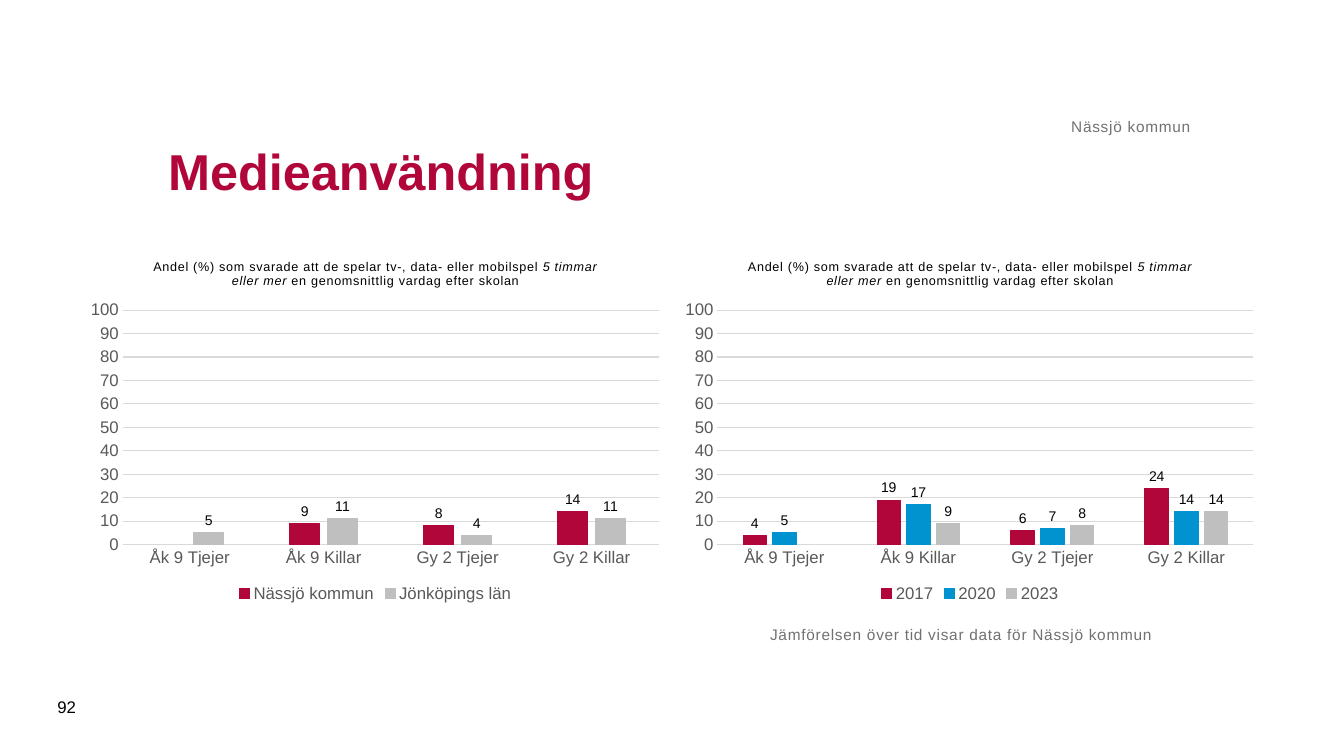
from lxml import etree
from pptx import Presentation, util as u
from pptx.chart.data import CategoryChartData
from pptx.dml.color import RGBColor
from pptx.enum import chart as ch, text
from pptx.oxml import parse_xml
from pptx.oxml.ns import nsdecls, qn

prs = Presentation()
prs.slide_width, prs.slide_height = u.Inches(13.333), u.Inches(7.5)
s = prs.slides.add_slide(prs.slide_layouts[6])

RED, BLUE, SILVER = "B1063A", "0093D0", "BFBFBF"
BLACK, AXIS, GRID, NOTE = "000000", "595959", "D9D9D9", "717171"
NUMBERS = "#,##0;#,##0"


def style(font, size, color, spacing=None):
    font.name, font.size = "Arial", u.Pt(size)
    font.color.rgb = RGBColor.from_string(color)
    if spacing:
        font._element.set("spc", str(spacing))


def box(left, top, width, height):
    """Turn percentages of the slide into lengths."""
    return [int(share * side / 100) for share, side in
            zip((left, top, width, height), (prs.slide_width, prs.slide_height) * 2)]


# Charts: two equal columns
categories = ["Åk 9 Tjejer", "Åk 9 Killar", "Gy 2 Tjejer", "Gy 2 Killar"]
title_runs = [("Andel (%) som svarade att de spelar tv-, data- eller mobilspel ", False),
              ("5 timmar eller mer", True),
              (" en genomsnittlig vardag efter skolan", False)]
charts = [
    [("Nässjö kommun", (None, 9, 8, 14), RED),
     ("Jönköpings län", (5, 11, 4, 11), SILVER)],
    [("2017", (4, 19, 6, 24), RED),
     ("2020", (5, 17, 7, 14), BLUE),
     ("2023", (None, 9, 8, 14), SILVER)],
]
plot_area = {"x": 0.073, "y": 0.187, "w": 0.906, "h": 0.643}

for col, series in enumerate(charts):
    data = CategoryChartData(number_format=NUMBERS)
    data.categories = categories
    for name, values, _ in series:
        data.add_series(name, values)
    chart = s.shapes.add_chart(ch.XL_CHART_TYPE.COLUMN_CLUSTERED,
                               *box(5.92 + 44.25 * col, 32, 44.02, 48.27), data).chart
    style(chart.font, 10, BLACK)

    # Chart title
    chart.has_title = True
    chart.chart_title.include_in_layout = False
    p = chart.chart_title.text_frame.paragraphs[0]
    for words, italic in title_runs:
        r = p.add_run()
        r.text = words
        style(r.font, 9, BLACK, 50)
        r.font.bold, r.font.italic = False, italic

    # Legend
    chart.has_legend = True
    chart.legend.position = ch.XL_LEGEND_POSITION.BOTTOM
    chart.legend.include_in_layout = False
    style(chart.legend.font, 12, AXIS)

    # Axes and gridlines
    cat, val = chart.category_axis, chart.value_axis
    for axis in (cat, val):
        axis.major_tick_mark = axis.minor_tick_mark = ch.XL_TICK_MARK.NONE
        style(axis.tick_labels.font, 12, AXIS)
    val.minimum_scale, val.maximum_scale, val.major_unit = 0, 100, 10
    val.tick_labels.number_format = NUMBERS
    val.tick_labels.number_format_is_linked = False
    val.format.line.fill.background()
    for line in (cat.format.line, val.major_gridlines.format.line):
        line.color.rgb, line.width = RGBColor.from_string(GRID), u.Pt(0.75)

    # Bars and their values
    plot = chart.plots[0]
    plot.gap_width, plot.overlap, plot.vary_by_categories = 219, -27, False
    for bars, (_, _, color) in zip(plot.series, series):
        fill, line = bars.format.fill, bars.format.line
        fill.solid()
        fill.fore_color.rgb = line.color.rgb = RGBColor.from_string(color)
        line.width = u.Pt(0.75)
        bars.invert_if_negative = False
        labels = bars.data_labels
        labels.show_value = True
        labels.position = ch.XL_LABEL_POSITION.OUTSIDE_END
        labels.number_format, labels.number_format_is_linked = NUMBERS, False
        style(labels.font, 10, BLACK)

    # Fixed plot area inside the axes
    area = chart._chartSpace.chart.plotArea
    for old in area.findall(qn("c:layout")):
        area.remove(old)
    layout = parse_xml(f"<c:layout {nsdecls('c')}><c:manualLayout/></c:layout>")
    settings = {"layoutTarget": "inner", "xMode": "edge", "yMode": "edge", **plot_area}
    for tag, value in settings.items():
        etree.SubElement(layout[0], qn(f"c:{tag}")).set("val", str(value))
    area.insert(0, layout)

# Heading, notes and page number
TOP, MIDDLE, BOTTOM = (text.MSO_ANCHOR.TOP, text.MSO_ANCHOR.MIDDLE, text.MSO_ANCHOR.BOTTOM)
LEFT, RIGHT = text.PP_ALIGN.LEFT, text.PP_ALIGN.RIGHT
texts = [
    ("Medieanvändning", (11.78, 13.07, 76.8, 18.93), 36, RED, None, MIDDLE, LEFT),
    ("Jämförelsen över tid visar data för Nässjö kommun",
     (57.3, 82.67, 39.83, 12.53), 11, NOTE, 50, TOP, LEFT),
    ("Nässjö kommun", (11.78, 8.27, 76.8, 9.73), 11, NOTE, 50, BOTTOM, RIGHT),
    ("92", (3.53, 90.8, 4.28, 5.33), 12, BLACK, None, MIDDLE, LEFT),
]
for words, place, size, color, spacing, anchor, align in texts:
    tf = s.shapes.add_textbox(*box(*place)).text_frame
    tf.word_wrap, tf.vertical_anchor = True, anchor
    if color == NOTE:
        tf.margin_left = tf.margin_right = tf.margin_top = tf.margin_bottom = 0
    tf.text = words
    p = tf.paragraphs[0]
    p.alignment = align
    style(p.runs[0].font, size, color, spacing)
    p.runs[0].font.bold = color == RED

prs.save("out.pptx")
